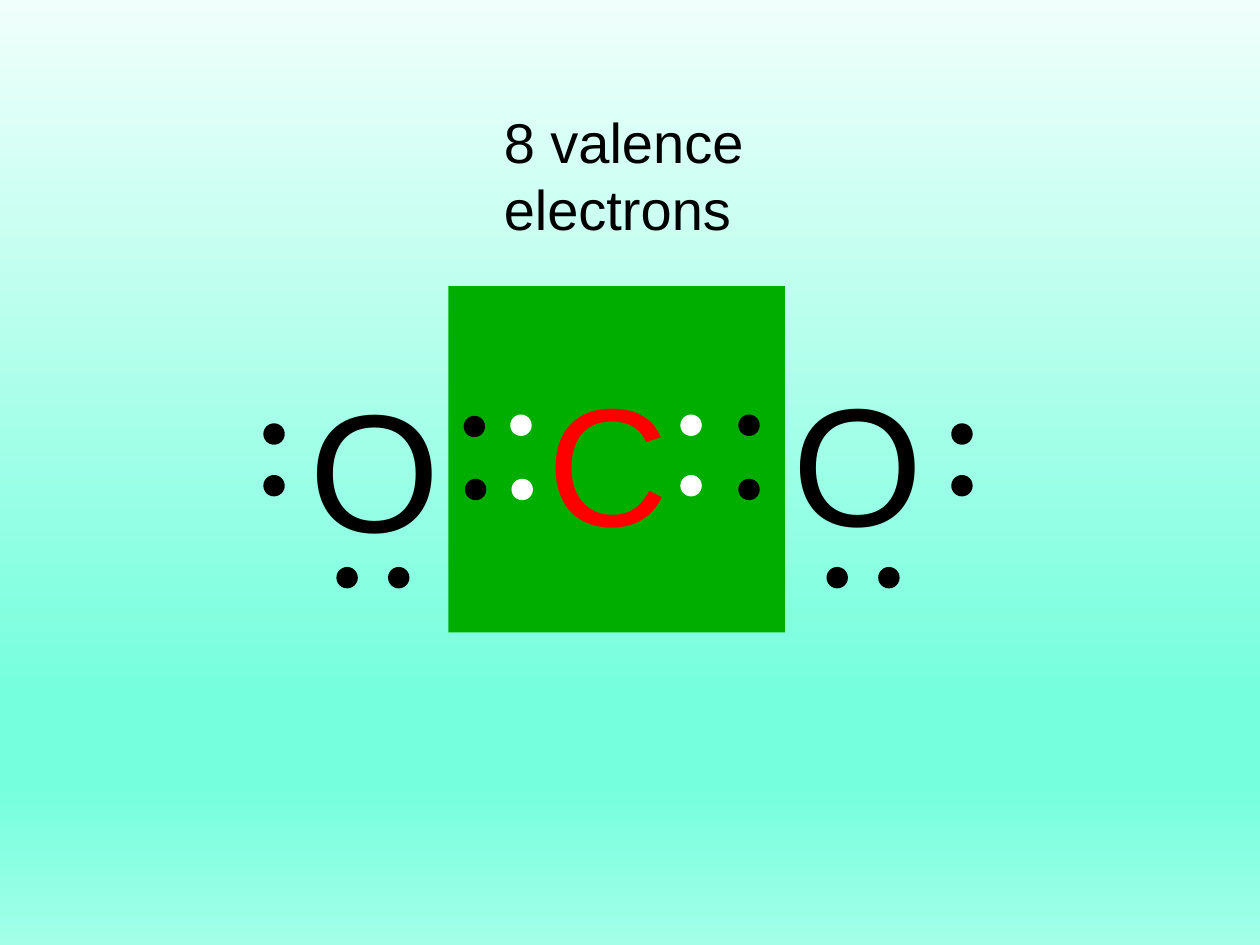
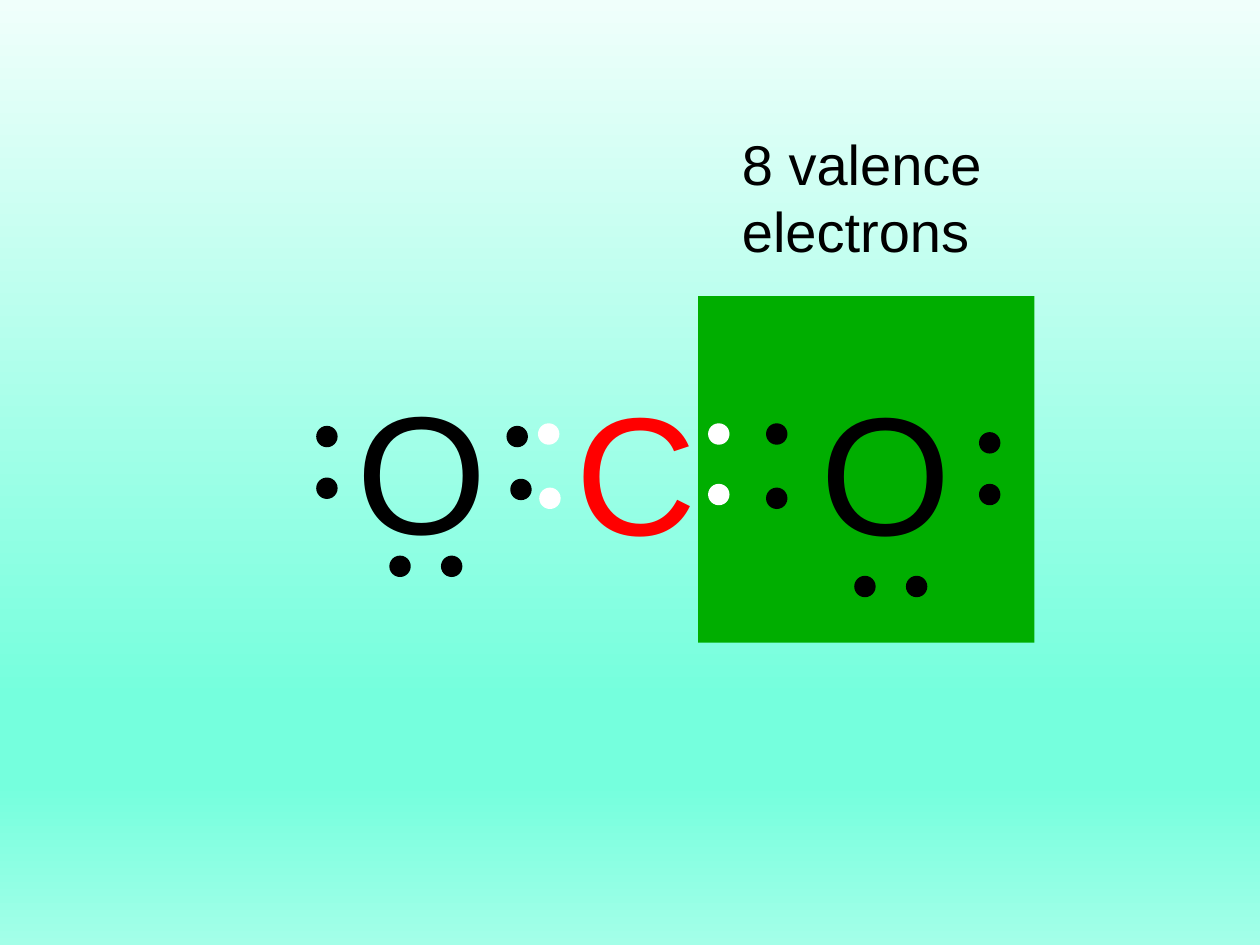
from dataclasses import dataclass

from lxml.etree import SubElement
from pptx import Presentation
from pptx.dml.color import RGBColor
from pptx.enum.shapes import MSO_SHAPE
from pptx.enum.text import MSO_AUTO_SIZE, PP_ALIGN
from pptx.oxml.ns import qn
from pptx.util import Inches, Pt


@dataclass(frozen=True)
class Theme:
    font: str = "Arial"
    label_size: int = 32
    atom_size: int = 96
    black: str = "000000"
    white: str = "FFFFFF"
    carbon: str = "FF0000"
    highlight: str = "00AE00"
    gradient: tuple = ((0, "F0FFFB"), (74, "75FFDD"), (83, "75FFDD"), (100, "A3FFE8"))
    dot: float = 0.17
    lone_gap: float = 0.41


class ElectronDeck:
    def __init__(self, theme):
        self.theme = theme
        self.deck = Presentation()
        self.deck.slide_width, self.deck.slide_height = Inches(10), Inches(7.5)
        self.paint_background()
        self.page = None

    def paint_background(self):
        """Give the master the gradient that every slide inherits."""
        master = self.deck.slide_master
        fill = master.background.fill
        fill.gradient()
        fill.gradient_angle = 270
        stops = master.element.find(".//" + qn("p:bg")).find(".//" + qn("a:gsLst"))
        for stop in list(stops):
            stops.remove(stop)
        for percent, color in self.theme.gradient:
            stop = SubElement(stops, qn("a:gs"), pos=str(percent * 1000))
            SubElement(stop, qn("a:srgbClr"), val=color)

    def add_page(self):
        self.page = self.deck.slides.add_slide(self.deck.slide_layouts[6])

    def shape(self, parent, kind, left, top, width, height, color):
        shape = parent.shapes.add_shape(
            kind, Inches(left), Inches(top), Inches(width), Inches(height))
        shape.shadow.inherit = False
        shape.fill.solid()
        shape.fill.fore_color.rgb = RGBColor.from_string(color)
        shape.line.fill.background()

    def highlight(self, left, top):
        self.shape(self.page, MSO_SHAPE.RECTANGLE, left, top, 2.67, 2.75,
                   self.theme.highlight)

    def text(self, words, left, top, width, height, size, color):
        box = self.page.shapes.add_textbox(
            Inches(left), Inches(top), Inches(width), Inches(height))
        frame = box.text_frame
        frame.word_wrap = True
        frame.auto_size = MSO_AUTO_SIZE.SHAPE_TO_FIT_TEXT
        para = frame.paragraphs[0]
        para.text = words
        para.alignment = PP_ALIGN.LEFT
        para.font.name = self.theme.font
        para.font.size = Pt(size)
        para.font.color.rgb = RGBColor.from_string(color)
        # Spacing as a share of the line height has no public setter.
        para.space_before = Pt(0)
        spacing = box.element.find(".//" + qn("a:spcBef"))
        spacing.remove(spacing[0])
        SubElement(spacing, qn("a:spcPct"), val="50000")

    def label(self, left, top):
        self.text("8 valence electrons", left, top, 2.17, 1.18,
                  self.theme.label_size, self.theme.black)

    def atom(self, symbol, left, top, color):
        self.text(symbol, left, top, 0.92, 1.7, self.theme.atom_size, color)

    def pair(self, left, top, step, color, parent=None):
        """Draw two electrons, the second moved by step (across, down)."""
        across, down = step
        for index in range(2):
            self.shape(parent or self.page, MSO_SHAPE.OVAL,
                       left + index * across, top + index * down,
                       self.theme.dot, self.theme.dot, color)

    def lone_pair(self, left, top, step):
        group = self.page.shapes.add_group_shape()
        self.pair(left, top, step, self.theme.black, group)

    def oxygen(self, left, top, side, below):
        """Draw O with its two lone pairs, placed relative to the letter."""
        gap = self.theme.lone_gap
        self.atom("O", left, top, self.theme.black)
        self.lone_pair(left + side[0], top + side[1], (0, gap))
        self.lone_pair(left + below[0], top + below[1], (gap, 0))

    def carbon_with_right_oxygen(self, left, top):
        theme = self.theme
        bond_top = top + 0.49
        self.oxygen(left + 1.94, top, side=(1.36, 0.56), below=(0.37, 1.7))
        self.pair(left + 1.61, bond_top, (0, 0.51), theme.black)
        self.atom("C", left, top, theme.carbon)
        self.pair(left + 1.15, bond_top, (0, 0.48), theme.white)
        self.pair(left - 0.2, bond_top, (0.01, 0.51), theme.white)


def main():
    theme = Theme()
    show = ElectronDeck(theme)

    # Carbon's octet
    show.add_page()
    show.highlight(3.56, 2.27)
    show.carbon_with_right_oxygen(4.25, 2.8)
    show.oxygen(2.36, 2.84, side=(-0.27, 0.52), below=(0.31, 1.66))
    show.pair(3.68, 3.3, (0.01, 0.5), theme.black)
    show.label(3.9, 0.8)

    # Right oxygen's octet
    show.add_page()
    show.highlight(5.54, 2.35)
    show.label(5.79, 0.98)
    show.oxygen(2.73, 2.86, side=(-0.22, 0.52), below=(0.36, 1.55))
    show.pair(4.02, 3.38, (0.03, 0.42), theme.black)
    show.carbon_with_right_oxygen(4.47, 2.87)

    show.deck.save("out.pptx")


if __name__ == "__main__":
    main()
